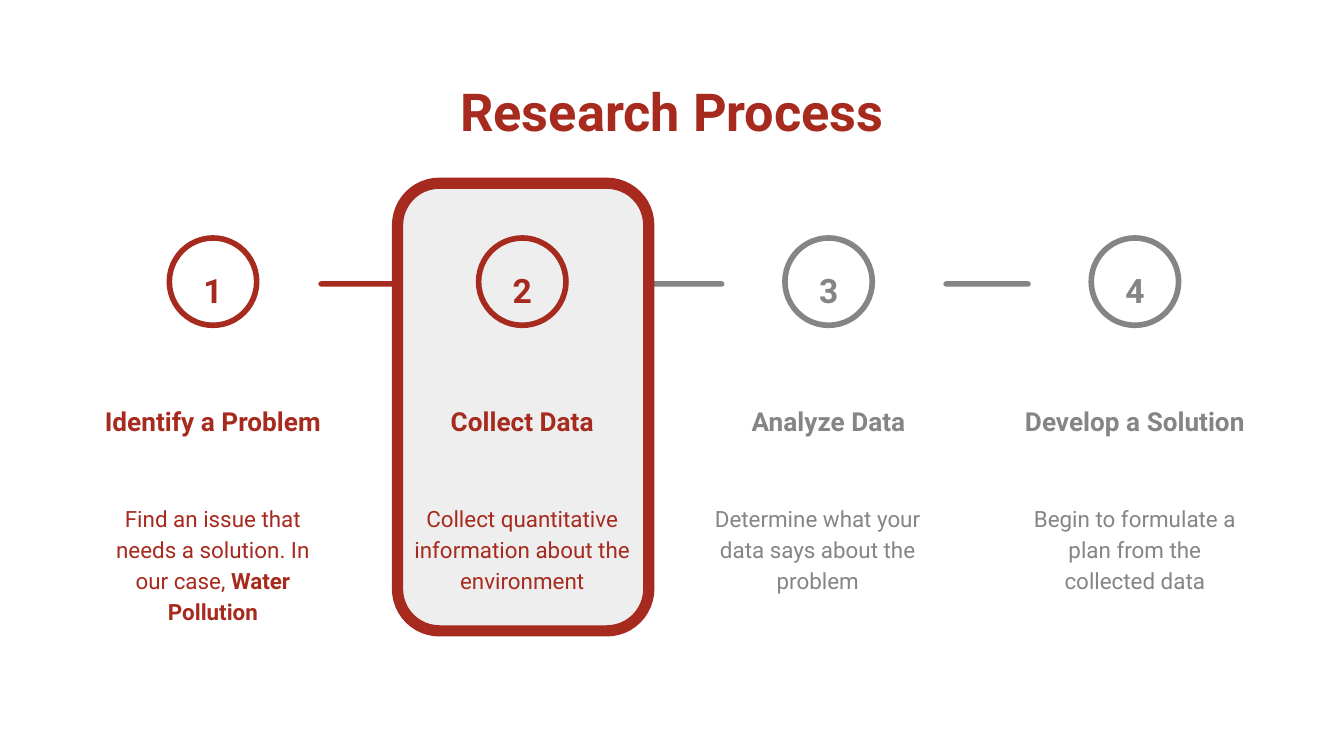
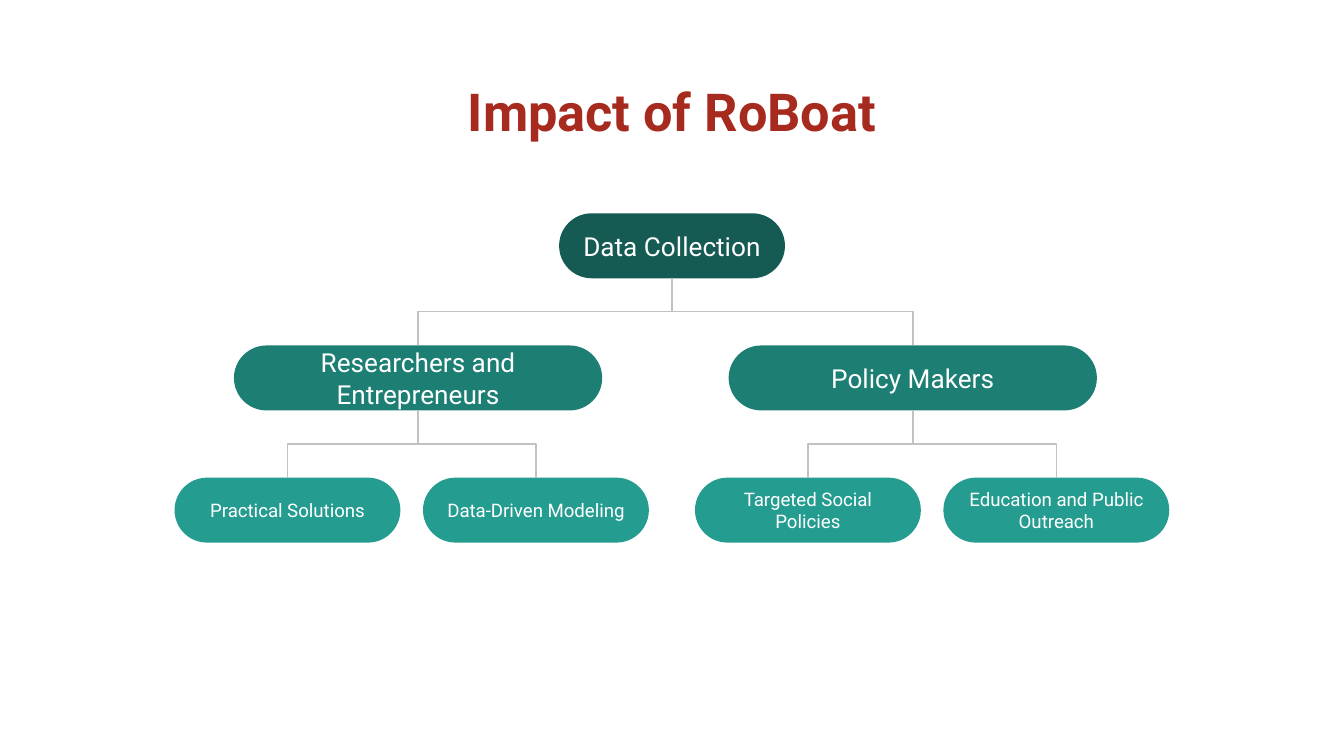
from lxml.etree import SubElement
from pptx import Presentation
from pptx.dml.color import RGBColor
from pptx.enum.shapes import MSO_CONNECTOR, MSO_SHAPE
from pptx.enum.text import MSO_ANCHOR, PP_ALIGN
from pptx.oxml.ns import qn
from pptx.util import Pt

FONT = "Roboto"
RED, GRAY, LIGHT, WHITE = "A72A1E", "858585", "EEEEEE", "FFFFFF"
DEEP_TEAL, MID_TEAL, TEAL, LINE_GRAY = "155B54", "1D7E74", "249C90", "C2C2C2"

STEP_WIDTH = 134.6
STEPS = [
    (114.1, 0, RED, "Identify a Problem",
     [("Find an issue that needs a solution. In our case, ", False), ("Water Pollution", True)]),
    (279.8, 0, RED, "Collect Data",
     [("Collect quantitative information about the environment", False)]),
    (443.9, -5.8, GRAY, "Analyze Data",
     [("Determine what your data says about the problem", False)]),
    (608, 0, GRAY, "Develop a Solution",
     [("Begin to formulate a plan from the collected data", False)]),
]
LINKS = [(170.6, RED), (341.3, GRAY), (505.4, GRAY)]

NODE_HEIGHT, LEVEL_TOP, LEVEL_STEP = 34.8, 114.3, 70.8
LEVELS = [(121, DEEP_TEAL, 14), (197.3, MID_TEAL, 14), (121, TEAL, 10)]
TREE = (360, "Data Collection", [
    (224, "Researchers and Entrepreneurs", [
        (154, "Practical Solutions", []),
        (287.1, "Data-Driven Modeling", []),
    ]),
    (489, "Policy Makers", [
        (432.8, "Targeted Social Policies", []),
        (565.9, "Education and Public Outreach", []),
    ]),
])


def color(value):
    return RGBColor.from_string(value)


class Deck:
    """Holds the presentation style and draws on the current slide."""

    def __init__(self):
        self.presentation = Presentation()
        self.presentation.slide_width = Pt(720)
        self.presentation.slide_height = Pt(405)
        self.slide = None
        self.shapes = None

    def add_slide(self):
        self.slide = self.presentation.slides.add_slide(self.presentation.slide_layouts[6])
        self.shapes = self.slide.shapes

    def start_group(self):
        self.shapes = self.slide.shapes.add_group_shape().shapes

    def set_text(self, shape, runs, size, text_color, anchor=MSO_ANCHOR.TOP, spacing=None,
                 after=None):
        frame = shape.text_frame
        frame.word_wrap = True
        frame.vertical_anchor = anchor
        frame.margin_left = frame.margin_right = Pt(7.2)
        frame.margin_top = frame.margin_bottom = Pt(7.2)
        paragraph = frame.paragraphs[0]
        paragraph.alignment = PP_ALIGN.CENTER
        if spacing:
            paragraph.line_spacing = spacing
        if after:
            paragraph.space_after = Pt(after)
        for text, bold in runs:
            run = paragraph.add_run()
            run.text = text
            run.font.name = FONT
            run.font.size = Pt(size)
            run.font.bold = bold
            run.font.color.rgb = color(text_color)

    def text(self, left, top, width, height, runs, size, text_color, **style):
        box = self.shapes.add_textbox(Pt(left), Pt(top), Pt(width), Pt(height))
        self.set_text(box, runs, size, text_color, **style)

    def title(self, text):
        self.text(24.5, 35.3, 671, 45.4, [(text, True)], 28, RED)

    def shape(self, kind, left, top, width, height, fill=None, line=None, weight=0, rounding=None):
        shape = self.shapes.add_shape(kind, Pt(left), Pt(top), Pt(width), Pt(height))
        shape.shadow.inherit = False
        if rounding is not None:
            shape.adjustments[0] = rounding
        if fill:
            shape.fill.solid()
            shape.fill.fore_color.rgb = color(fill)
        else:
            shape.fill.background()
        if line:
            shape.line.color.rgb = color(line)
            shape.line.width = Pt(weight)
        else:
            shape.line.fill.background()
        return shape

    def branch(self, parent, child):
        """Draws an elbow from the bottom of parent to the top of child."""
        start_x, start_y = parent.left + parent.width // 2, parent.top + parent.height
        end_x, end_y = child.left + child.width // 2, child.top
        connector = self.shapes.add_connector(MSO_CONNECTOR.ELBOW, start_x, start_y, end_x, end_y)
        connector.begin_connect(parent, 2)
        connector.end_connect(child, 0)
        connector.width, connector.height = end_y - start_y, abs(end_x - start_x)
        connector.left = (start_x + end_x - connector.width) // 2
        connector.top = (start_y + end_y - connector.height) // 2
        to_right = end_x > start_x
        properties = connector._element.spPr
        transform = properties.find(qn("a:xfrm"))
        transform.set("rot", "16200000" if to_right else "5400000")
        transform.set("flipH", "1" if to_right else "0")
        transform.set("flipV", "0")
        connector.line.color.rgb = color(LINE_GRAY)
        connector.line.width = Pt(0.75)
        SubElement(properties, qn("a:effectLst"))

    def step(self, number, center, body_shift, step_color, heading, body):
        self.start_group()
        left = center - STEP_WIDTH / 2
        self.shape(MSO_SHAPE.OVAL, center - 23.4, 127.5, 46.8, 46.8, line=step_color, weight=3)
        self.text(center - 17.3, 134, 34.6, 25.2, [(str(number), True)], 18, step_color,
                  spacing=1.15, after=16)
        self.text(left, 205.9, STEP_WIDTH, 35.3, [(heading, True)], 14, step_color,
                  anchor=MSO_ANCHOR.BOTTOM, spacing=1.15)
        self.text(left + body_shift, 261.4, STEP_WIDTH, 58.3, body, 12, step_color,
                  spacing=1.15, after=16)

    def node(self, center, text, children, level=0):
        width, fill, size = LEVELS[level]
        top = LEVEL_TOP + level * LEVEL_STEP
        shape = self.shape(MSO_SHAPE.ROUNDED_RECTANGLE, center - width / 2, top, width,
                           NODE_HEIGHT, fill=fill, rounding=0.5)
        self.set_text(shape, [(text, False)], size, WHITE, anchor=MSO_ANCHOR.MIDDLE)
        for child in children:
            self.branch(shape, self.node(*child, level=level + 1))
        return shape


def research_process(deck):
    deck.add_slide()
    for left, link_color in LINKS:
        deck.shape(MSO_SHAPE.ROUNDED_RECTANGLE, left, 150.7, 46.8, 2.9,
                   fill=link_color, rounding=0.5)
    deck.shape(MSO_SHAPE.ROUNDED_RECTANGLE, 213, 98.2, STEP_WIDTH, 239.8,
               fill=LIGHT, line=RED, weight=6, rounding=0.167)
    deck.title("Research Process")
    for number, step in enumerate(STEPS, 1):
        deck.step(number, *step)


def impact(deck):
    deck.add_slide()
    deck.title("Impact of RoBoat")
    deck.node(*TREE)


def main():
    deck = Deck()
    research_process(deck)
    impact(deck)
    deck.presentation.save("out.pptx")


if __name__ == "__main__":
    main()
